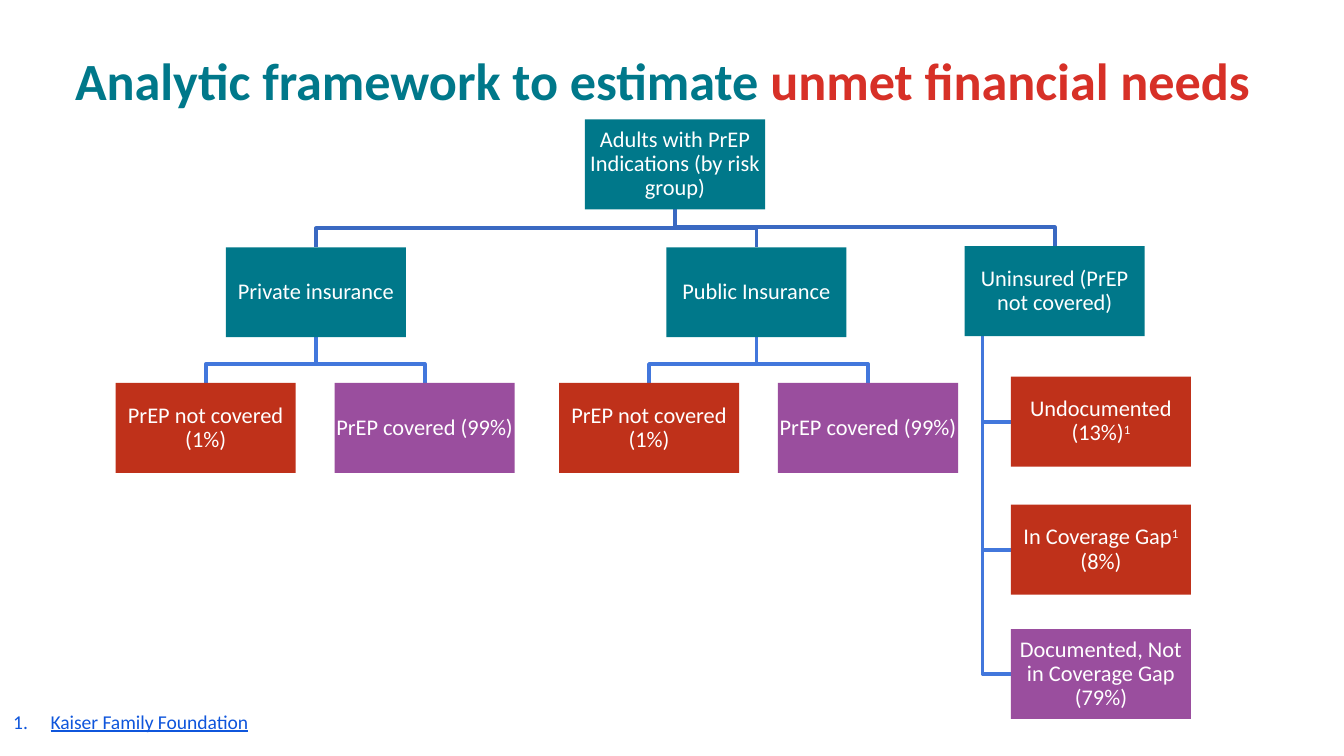
"""Build the slide with the insurance tree behind unmet PrEP financial needs."""
from dataclasses import dataclass
from typing import Iterator

from lxml.etree import SubElement
from pptx import Presentation
from pptx.dml.color import RGBColor as Rgb
from pptx.enum.shapes import MSO_SHAPE as Shape
from pptx.enum.text import MSO_ANCHOR as Anchor, PP_ALIGN as Align
from pptx.oxml.ns import qn
from pptx.util import Pt


@dataclass(frozen=True)
class Theme:
    """Colours and type sizes of the slide."""
    font: str = "Calibri"
    teal: str = "00788A"
    red: str = "BF311A"
    purple: str = "9A4E9E"
    white: str = "FFFFFF"
    accent: str = "D73027"
    link: str = "0F56DC"
    upper_line: str = "3A69C2"
    lower_line: str = "4277DC"
    title_size: float = 28
    box_size: float = 12
    note_size: float = 10.5


@dataclass(frozen=True)
class Group:
    """One box of the tree; bars in the label enclose superscripts."""
    label: str
    left: float
    top: float
    fill: str
    children: tuple["Group", ...] = ()
    hanging: bool = False


THEME = Theme()
BOX_WIDTH, BOX_HEIGHT = 96.5, 48.2
BEND_RISE, SPINE_INSET = 10.1, 9.6
SECOND_ROW, THIRD_ROW, HANGING_LEFT = 132.5, 205.2, 541.6


def coverage_pair(left: float) -> tuple[Group, Group]:
    """Return the uncovered and covered shares of an insured group."""
    return (Group("PrEP not covered (1%)", left, THIRD_ROW, THEME.red),
            Group("PrEP covered (99%)", left + 117.3, THIRD_ROW, THEME.purple))


ADULTS = Group("Adults with PrEP Indications (by risk group)", 313.4, 64, THEME.teal, (
    Group("Private insurance", 121, SECOND_ROW, THEME.teal, coverage_pair(62)),
    Group("Public Insurance", 357, SECOND_ROW, THEME.teal, coverage_pair(299.5)),
    Group("Uninsured (PrEP not covered)", 516.8, 131.9, THEME.teal, (
        Group("Undocumented (13%)|1", HANGING_LEFT, 201.8, THEME.red),
        Group("In Coverage Gap|1 |(8%)", HANGING_LEFT, 270.4, THEME.red),
        Group("Documented, Not in Coverage Gap (79%)", HANGING_LEFT, 337, THEME.purple),
    ), hanging=True),
))


def add_run(paragraph, text: str, size: float, color: str, **formats):
    """Append a formatted run."""
    run = paragraph.add_run()
    run.text = text
    for name, value in {"name": THEME.font, "size": Pt(size), **formats}.items():
        setattr(run.font, name, value)
    run.font.color.rgb = Rgb.from_string(color)
    return run


def walk(group: Group) -> Iterator[Group]:
    """Yield a group and all groups below it."""
    yield group
    for child in group.children:
        yield from walk(child)


def draw_branch(shapes, parent: Group, child: Group, color: str) -> None:
    """Draw the bent line from a parent box to a child box."""
    bottom = parent.top + BOX_HEIGHT
    if parent.hanging:
        spine, middle = parent.left + SPINE_INSET, child.top + BOX_HEIGHT / 2
        route = [(spine, bottom), (spine, middle), (child.left, middle)]
    else:
        start, end = parent.left + BOX_WIDTH / 2, child.left + BOX_WIDTH / 2
        bend = child.top - BEND_RISE
        route = [(start, bottom), (start, bend), (end, bend), (end, child.top)]
    corners = [(Pt(x), Pt(y)) for x, y in route]
    builder = shapes.build_freeform(*corners[0])
    builder.add_line_segments(corners[1:], close=False)
    branch = builder.convert_to_shape()
    branch.shadow.inherit = False
    branch.fill.background()
    branch.line.color.rgb = Rgb.from_string(color)
    branch.line.width = Pt(2)


def draw_box(shapes, group: Group) -> None:
    """Draw the filled box of a group with its label."""
    box = shapes.add_shape(Shape.RECTANGLE, Pt(group.left), Pt(group.top),
                           Pt(BOX_WIDTH), Pt(BOX_HEIGHT))
    box.shadow.inherit = False
    box.fill.solid()
    box.fill.fore_color.rgb = Rgb.from_string(group.fill)
    box.line.fill.background()
    frame = box.text_frame
    margins = dict.fromkeys(
        ("margin_left", "margin_top", "margin_right", "margin_bottom"), Pt(0.6))
    for name, value in {**margins, "word_wrap": True,
                        "vertical_anchor": Anchor.MIDDLE}.items():
        setattr(frame, name, value)
    label = frame.paragraphs[0]
    label.alignment = Align.CENTER
    label.line_spacing = 0.9
    for index, piece in enumerate(group.label.split("|")):
        run = add_run(label, piece, THEME.box_size, THEME.white)
        if index % 2:
            run.font._element.set("baseline", "30000")


def add_text(shapes, left: float, top: float, width: float, height: float, anchor: Anchor):
    """Add a wrapping text box and return its first paragraph."""
    frame = shapes.add_textbox(Pt(left), Pt(top), Pt(width), Pt(height)).text_frame
    frame.word_wrap = True
    frame.vertical_anchor = anchor
    return frame.paragraphs[0]


def draw_footnote(shapes) -> None:
    """Draw the numbered source note."""
    note = add_text(shapes, 0, 376.6, 492.5, 20, Anchor.TOP)
    properties = note._p.get_or_add_pPr()
    properties.set("marL", str(Pt(20)))
    properties.set("indent", str(-Pt(20)))
    SubElement(properties, qn("a:buFont"), typeface=THEME.font)
    SubElement(properties, qn("a:buAutoNum"), type="arabicPeriod")
    add_run(note, "Kaiser Family Foundation", THEME.note_size, THEME.link, underline=True)


def main() -> None:
    """Build and save the slide."""
    deck = Presentation()
    deck.slide_width, deck.slide_height = Pt(720), Pt(405)
    shapes = deck.slides.add_slide(deck.slide_layouts[6]).shapes
    draw_footnote(shapes)
    for parent in walk(ADULTS):
        color = THEME.upper_line if parent is ADULTS else THEME.lower_line
        for child in parent.children:
            draw_branch(shapes, parent, child, color)
    for group in walk(ADULTS):
        draw_box(shapes, group)
    title = add_text(shapes, 33.1, 20.9, 653.8, 43.2, Anchor.MIDDLE)
    for text, color in (("Analytic framework to estimate ", THEME.teal),
                        ("unmet financial needs", THEME.accent)):
        add_run(title, text, THEME.title_size, color, bold=True)
    deck.save("out.pptx")


if __name__ == "__main__":
    main()
